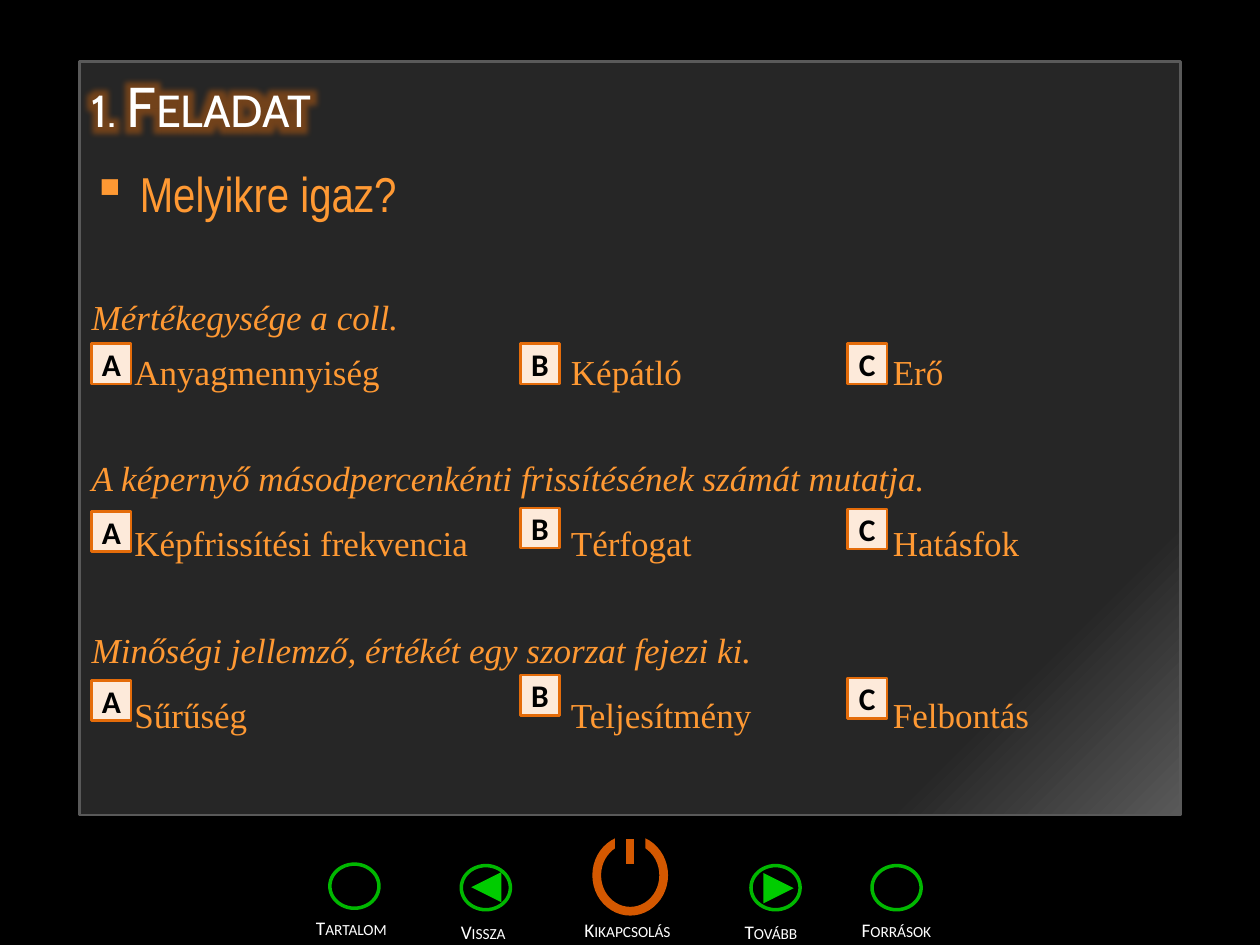
from lxml.etree import SubElement
from pptx import Presentation
from pptx.dml.color import RGBColor
from pptx.enum.shapes import MSO_CONNECTOR, MSO_SHAPE
from pptx.enum.text import MSO_ANCHOR, PP_ALIGN
from pptx.oxml.ns import qn
from pptx.util import Cm, Pt

BLACK = RGBColor(0x00, 0x00, 0x00)
WHITE = RGBColor(0xFF, 0xFF, 0xFF)
PANEL = RGBColor(0x26, 0x26, 0x26)
PANEL_EDGE = RGBColor(0x59, 0x59, 0x59)
ORANGE = RGBColor(0xFF, 0x99, 0x33)
POWER = RGBColor(0xD4, 0x58, 0x00)
GREEN_RING = RGBColor(0x00, 0xB8, 0x00)
GREEN = RGBColor(0x00, 0xCC, 0x00)
CREAM = RGBColor(0xFD, 0xEA, 0xDA)
BUTTON_EDGE = RGBColor(0xE4, 0x6C, 0x0A)

OPTION_TABS = (0.86, 9.66, 16.15)
# question, options, space before the question, space before the options
QUESTIONS = [
    ("Mértékegysége a coll.", ("Anyagmennyiség", "Képátló", "Erő"), 42, 7),
    ("A képernyő másodpercenkénti frissítésének számát mutatja.",
     ("Képfrissítési frekvencia", "Térfogat", "Hatásfok"), 37, 13),
    ("Minőségi jellemző, értékét egy szorzat fejezi ki.",
     ("Sűrűség", "Teljesítmény", "Felbontás"), 37, 13),
]
BUTTON_COLUMNS = {"A": 1.85, "B": 10.49, "C": 17.09}
BUTTON_ROWS = [(6.93, 6.93, 6.93), (10.31, 10.24, 10.26), (13.72, 13.61, 13.67)]
# label, label left, top and width, ring left and top
NAVIGATION = [
    ("Tartalom", 6.12, 18.34, 2.11, 6.65, 17.42),
    ("Vissza", 9.04, 18.42, 1.5, 9.3, 17.45),
    ("Tovább", 14.76, 18.42, 1.75, 15.14, 17.45),
    ("Források", 17.12, 18.39, 1.93, 17.58, 17.45),
]


def write_text(frame, text, *, font, size, color, bold=False, italic=False,
               small_caps=False, align=PP_ALIGN.LEFT, before=0, bullet=None,
               indent=0, tabs=(), glow=None):
    """Fill the first paragraph if it is still empty, otherwise add one."""
    paragraph = frame.paragraphs[0]
    if paragraph.runs:
        paragraph = frame.add_paragraph()
    paragraph.alignment = align
    if before:
        paragraph.space_before = Pt(before)
    properties = paragraph._p.get_or_add_pPr()
    if bullet:
        properties.set("marL", str(Cm(indent)))
        properties.set("indent", str(-Cm(indent)))
        SubElement(properties, qn("a:buChar"), char=bullet)
    if tabs:
        stops = SubElement(properties, qn("a:tabLst"))
        for position in tabs:
            SubElement(stops, qn("a:tab"), pos=str(Cm(position)), algn="l")
    run = paragraph.add_run()
    run.text = text
    run.font.name, run.font.size = font, Pt(size)
    run.font.bold, run.font.italic = bold, italic
    run.font.color.rgb = color
    if small_caps:
        run.font._element.set("cap", "small")
    if glow:
        effects = run.font._element.makeelement(qn("a:effectLst"), {})
        run.font._element.find(qn("a:solidFill")).addnext(effects)
        halo = SubElement(effects, qn("a:glow"), rad=str(Pt(18)))
        tint = SubElement(halo, qn("a:srgbClr"), val=str(glow))
        SubElement(tint, qn("a:alpha"), val="40000")


class QuizSlide:
    def __init__(self, slide):
        self.slide = slide
        self.body_font = "Times New Roman"
        self.label_font = "Calibri"
        slide.background.fill.solid()
        slide.background.fill.fore_color.rgb = BLACK

    def shape(self, kind, left, top, width, height, fill=None, line=None, weight=2):
        shape = self.slide.shapes.add_shape(
            kind, Cm(left), Cm(top), Cm(width), Cm(height))
        shape.shadow.inherit = False
        if fill is None:
            shape.fill.background()
        else:
            shape.fill.solid()
            shape.fill.fore_color.rgb = fill
        if line is None:
            shape.line.fill.background()
        else:
            shape.line.color.rgb = line
            shape.line.width = Pt(weight)
        return shape

    def text_box(self, left, top, width, height, anchor=MSO_ANCHOR.TOP):
        box = self.slide.shapes.add_textbox(Cm(left), Cm(top), Cm(width), Cm(height))
        box.text_frame.word_wrap = True
        box.text_frame.vertical_anchor = anchor
        return box.text_frame

    def panel(self):
        panel = self.shape(MSO_SHAPE.RECTANGLE, 1.6, 1.24, 22.2, 15.19,
                           line=PANEL_EDGE, weight=1.5)
        panel.fill.gradient()
        panel.fill.gradient_angle = 315
        for stop, color, position in zip(panel.fill.gradient_stops,
                                         (PANEL, PANEL_EDGE), (0.84, 1)):
            stop.color.rgb = color
            stop.position = position

    def label(self, text, left, top, width):
        write_text(self.text_box(left, top, width, 0.74), text,
                   font=self.label_font, size=11, color=WHITE, small_caps=True)

    def arrow(self, left, top, rotation):
        triangle = self.shape(MSO_SHAPE.FLOWCHART_EXTRACT, left, top, 0.61, 0.61, GREEN)
        triangle.rotation = rotation

    def power_symbol(self):
        self.shape(MSO_SHAPE.OVAL, 12.03, 16.92, 1.35, 1.45, line=POWER, weight=5)
        self.shape(MSO_SHAPE.RECTANGLE, 12.4, 16.69, 0.61, 0.46, BLACK)
        stroke = self.slide.shapes.add_connector(
            MSO_CONNECTOR.STRAIGHT, Cm(12.7), Cm(16.92), Cm(12.7), Cm(17.42))
        stroke.line.color.rgb = POWER
        stroke.line.width = Pt(5)
        SubElement(stroke._element.spPr, qn("a:effectLst"))

    def answer_button(self, letter, left, top):
        button = self.shape(MSO_SHAPE.ACTION_BUTTON_CUSTOM, left, top, 0.79, 0.81,
                            CREAM, BUTTON_EDGE, 1.5)
        frame = button.text_frame
        frame.word_wrap = False
        frame.vertical_anchor = MSO_ANCHOR.MIDDLE
        frame.margin_left = frame.margin_right = 0
        frame.margin_top = frame.margin_bottom = 0
        write_text(frame, letter, font=self.label_font, size=18, color=BLACK,
                   bold=True, align=PP_ALIGN.CENTER)

    def questions(self):
        body = self.text_box(1.6, 3.17, 22.2, 13.26)
        write_text(body, "Melyikre igaz?", font="Arial Narrow", size=28,
                   color=ORANGE, bullet="▪", indent=0.97)
        for question, options, question_gap, options_gap in QUESTIONS:
            write_text(body, question, font=self.body_font, size=20, color=ORANGE,
                       italic=True, before=question_gap)
            write_text(body, "".join("\t" + option for option in options),
                       font=self.body_font, size=20, color=ORANGE,
                       before=options_gap, tabs=OPTION_TABS)


def main():
    presentation = Presentation()
    presentation.slide_width, presentation.slide_height = Cm(25.4), Cm(19.05)
    quiz = QuizSlide(presentation.slides.add_slide(presentation.slide_layouts[6]))

    quiz.panel()
    quiz.power_symbol()
    quiz.label("Kikapcsolás", 11.53, 18.39, 2.49)
    for text, left, top, width, ring_left, ring_top in NAVIGATION:
        quiz.shape(MSO_SHAPE.OVAL, ring_left, ring_top, 0.99, 0.89, line=GREEN_RING)
        quiz.label(text, left, top, width)
    quiz.arrow(9.5, 17.58, 270)
    quiz.arrow(15.39, 17.6, 90)

    title = quiz.text_box(1.6, 1.12, 22.2, 2.01, MSO_ANCHOR.MIDDLE)
    write_text(title, "1. Feladat", font="Cabin", size=32, color=WHITE,
               small_caps=True, glow=BUTTON_EDGE)
    quiz.questions()
    for row in BUTTON_ROWS:
        for (letter, left), top in zip(BUTTON_COLUMNS.items(), row):
            quiz.answer_button(letter, left, top)

    presentation.save("out.pptx")


if __name__ == "__main__":
    main()
